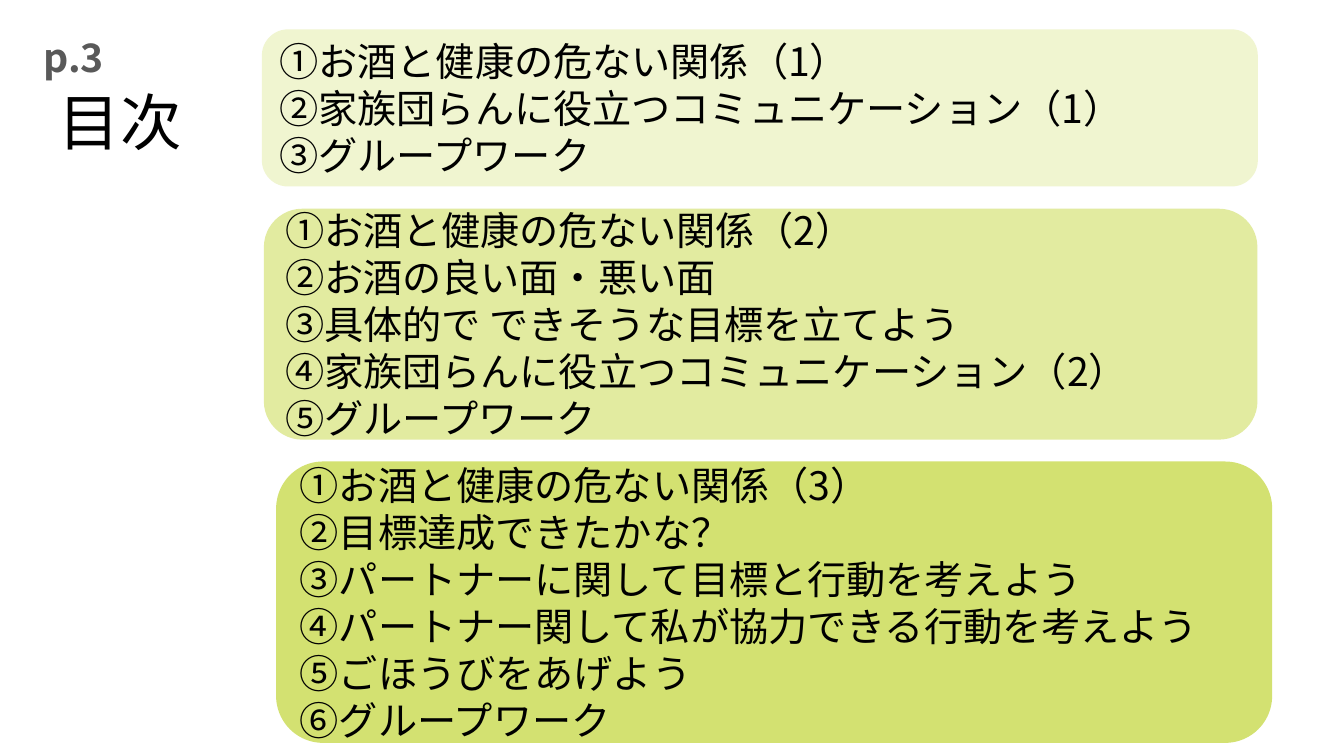
import pptx
import pptx.util
import pptx.dml.color
import pptx.enum.shapes
import pptx.enum.text
import pptx.oxml.ns
import lxml.etree

Cm, Pt = pptx.util.Cm, pptx.util.Pt
ALIGN = pptx.enum.text.PP_ALIGN
ANCHOR = pptx.enum.text.MSO_ANCHOR
FONT = "Noto Sans CJK JP"
COLORS = {"ink": "000000", "gray": "595959", "pale": "F0F5D0",
          "mid": "E2EBA0", "deep": "D3E171"}


def color(name):
    return pptx.dml.color.RGBColor.from_string(COLORS[name])


def write(frame, lines, size=28, ink="ink", bold=False, align=ALIGN.LEFT,
          anchor=ANCHOR.MIDDLE, pitch=None):
    """Fill a text frame, one paragraph per line."""
    frame.word_wrap = True
    frame.auto_size = pptx.enum.text.MSO_AUTO_SIZE.NONE
    frame.vertical_anchor = anchor
    for i, line in enumerate(lines):
        para = frame.add_paragraph() if i else frame.paragraphs[0]
        para.alignment = align
        para.line_spacing = pitch
        run = para.add_run()
        run.text = line
        font = run.font
        font.name, font.size, font.bold = FONT, Pt(size), bold
        font.color.rgb = color(ink)
        # East Asian typeface
        east = lxml.etree.SubElement(run._r.get_or_add_rPr(),
                                     pptx.oxml.ns.qn("a:ea"))
        east.set("typeface", FONT)


class Deck:
    def __init__(self):
        self.show = pptx.Presentation()
        self.show.slide_width, self.show.slide_height = Cm(33.87), Cm(19.05)
        self.slide = self.show.slides.add_slide(self.show.slide_layouts[5])

    def title(self, text, left, top, width, height):
        head = self.slide.shapes.title
        head.left, head.top = Cm(left), Cm(top)
        head.width, head.height = Cm(width), Cm(height)
        write(head.text_frame, [text], size=44, anchor=ANCHOR.BOTTOM, pitch=0.9)

    def panel(self, lines, fill, left, top, width, height):
        box = self.slide.shapes.add_shape(
            pptx.enum.shapes.MSO_SHAPE.ROUNDED_RECTANGLE,
            Cm(left), Cm(top), Cm(width), Cm(height))
        box.shadow.inherit = False
        box.fill.solid()
        box.fill.fore_color.rgb = color(fill)
        box.line.fill.background()
        write(box.text_frame, lines, pitch=Pt(33.6))

    def label(self, text, left, top, width, height):
        box = self.slide.shapes.add_textbox(Cm(left), Cm(top), Cm(width), Cm(height))
        write(box.text_frame, [text], ink="gray", bold=True, align=ALIGN.CENTER)


def main():
    deck = Deck()
    deck.title("目次", 1.22, 0.79, 26.04, 3.33)

    # One panel per session
    deck.panel(["①お酒と健康の危ない関係（1）",
                "②家族団らんに役立つコミュニケーション（1）",
                "③グループワーク"],
               "pale", 6.6, 0.74, 25.1, 3.96)
    deck.panel(["①お酒と健康の危ない関係（2）",
                "②お酒の良い面・悪い面",
                "③具体的で できそうな目標を立てよう",
                "④家族団らんに役立つコミュニケーション（2）",
                "⑤グループワーク"],
               "mid", 6.65, 5.26, 25.04, 5.82)
    deck.panel(["①お酒と健康の危ない関係（3）",
                "②目標達成できたかな？",
                "③パートナーに関して目標と行動を考えよう",
                "④パートナー関して私が協力できる行動を考えよう",
                "⑤ごほうびをあげよう",
                "⑥グループワーク"],
               "deep", 6.96, 11.63, 25.1, 7.09)

    # Page mark
    deck.label("p.3", 0, 0.36, 3.71, 2.16)
    deck.show.save("out.pptx")


if __name__ == "__main__":
    main()
